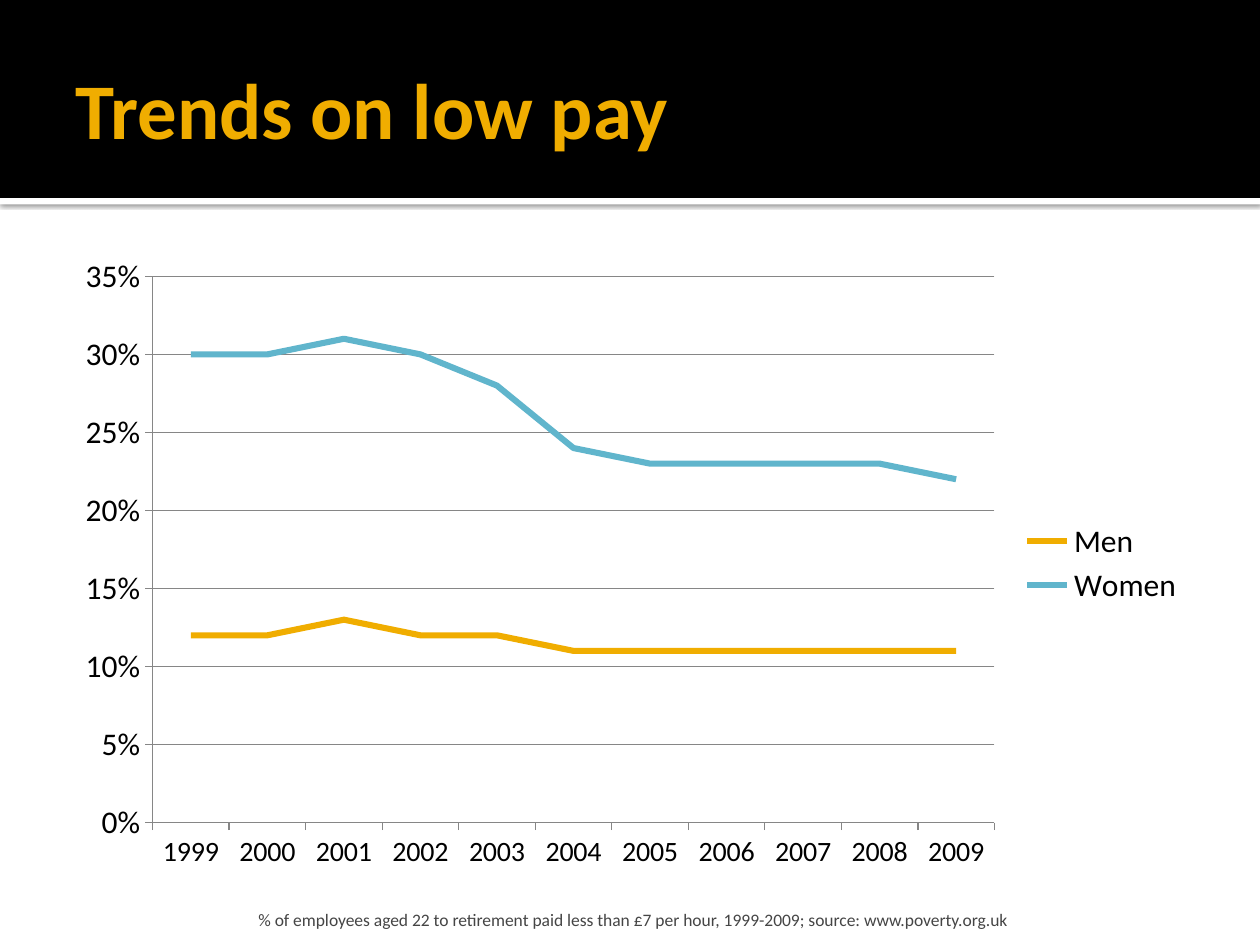
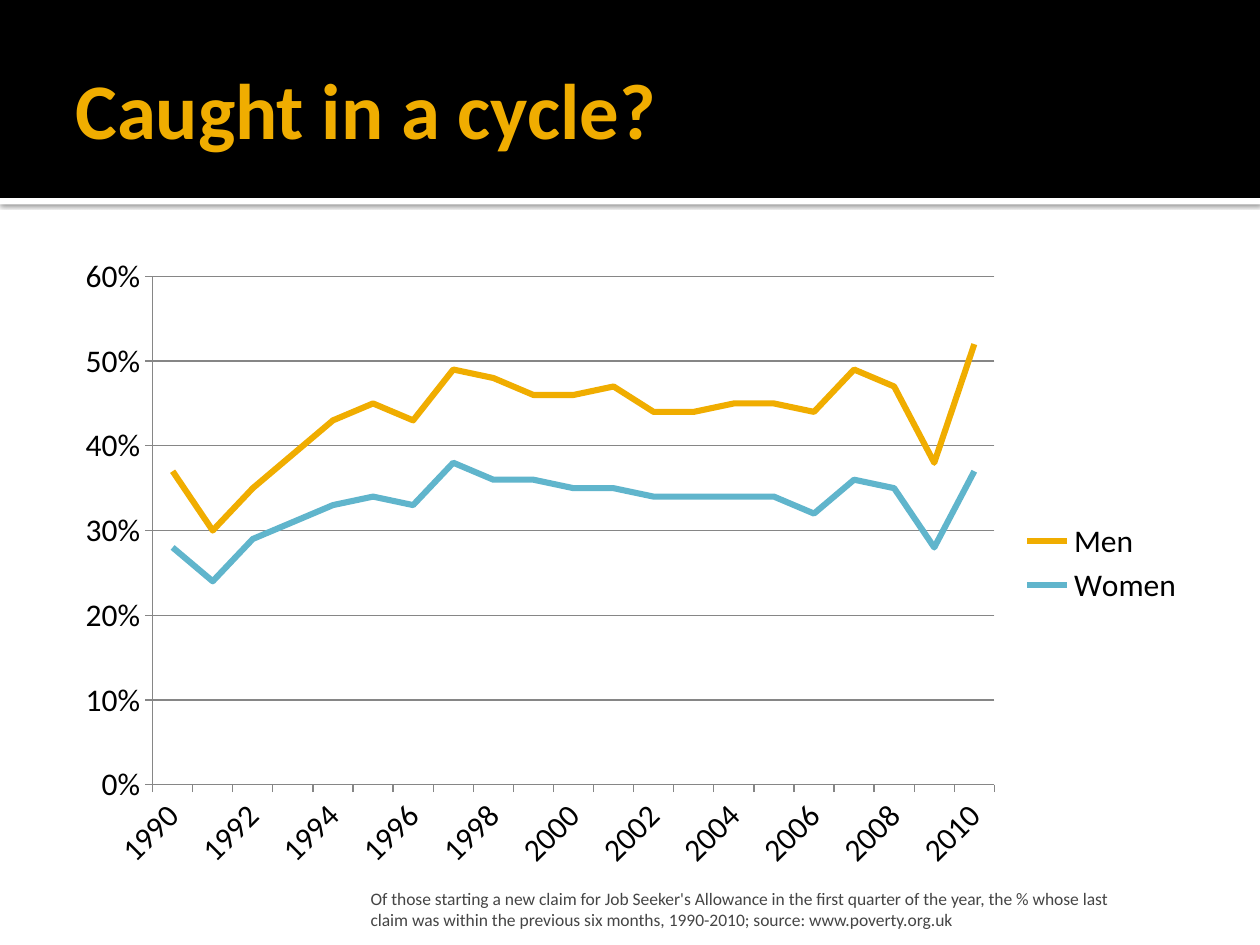
import pptx
import pptx.util
import pptx.chart.data
import pptx.dml.color
import pptx.enum.chart
import pptx.enum.shapes
import pptx.enum.text
import pptx.oxml
import pptx.oxml.ns

Cm = pptx.util.Cm
Pt = pptx.util.Pt
ANCHOR = pptx.enum.text.MSO_ANCHOR
TICK = pptx.enum.chart.XL_TICK_MARK

COLORS = {
    "band": "000000",
    "rule": "FFFFFF",
    "title": "F0AD00",
    "source": "454545",
    "label": "000000",
    "grid": "868686",
    "Men": "F0AD00",
    "Women": "60B5CC",
}
FONT = "Calibri"
SLIDE_WIDTH = 25.4
BAND_HEIGHT = 3.99
SOURCE_RIGHT = 22.63

SHADOW = (
    '<a:outerShdw %s blurRad="31750" dist="10160" dir="5400000" algn="tl" rotWithShape="0">'
    '<a:srgbClr val="000000"><a:alpha val="60000"/></a:srgbClr></a:outerShdw>'
    % pptx.oxml.ns.nsdecls("a")
)

TRENDS = {
    "title": "Trends on low pay",
    "years": range(1999, 2010),
    "percent": {
        "Men": [12, 12, 13, 12, 12, 11, 11, 11, 11, 11, 11],
        "Women": [30, 30, 31, 30, 28, 24, 23, 23, 23, 23, 22],
    },
    "scale": {"minimum_scale": 0, "maximum_scale": 0.35, "major_unit": 0.05},
    "year_size": 16,
    "year_turn": 0,
    "source": "% of employees aged 22 to retirement paid less than £7 per hour, "
              "1999-2009; source: www.poverty.org.uk",
    "source_left": 5.08,
}
CYCLE = {
    "title": "Caught in a cycle?",
    "years": range(1990, 2011),
    "percent": {
        "Men": [37, 30, 35, 39, 43, 45, 43, 49, 48, 46, 46,
                47, 44, 44, 45, 45, 44, 49, 47, 38, 52],
        "Women": [28, 24, 29, 31, 33, 34, 33, 38, 36, 36, 35,
                  35, 34, 34, 34, 34, 32, 36, 35, 28, 37],
    },
    "scale": {"minimum_scale": 0, "maximum_scale": 0.6, "major_unit": 0.1},
    "year_size": 18,
    "year_turn": -45,
    "source": "Of those starting a new claim for Job Seeker's Allowance in the first "
              "quarter of the year, the % whose last claim was within the previous six "
              "months, 1990-2010; source: www.poverty.org.uk",
    "source_left": 7.34,
}


def rgb(key):
    return pptx.dml.color.RGBColor.from_string(COLORS[key])


def apply(target, values):
    for name, value in values.items():
        setattr(target, name, value)


def style_font(font, size, color, bold=False):
    apply(font, {"name": FONT, "size": Pt(size), "bold": bold})
    font.color.rgb = rgb(color)


def style_line(line, color, width):
    line.color.rgb = rgb(color)
    line.width = Pt(width)


def add_bar(slide, top, height, color):
    bar = slide.shapes.add_shape(
        pptx.enum.shapes.MSO_SHAPE.RECTANGLE, 0, Cm(top), Cm(SLIDE_WIDTH), Cm(height))
    bar.shadow.inherit = False
    bar.fill.solid()
    bar.fill.fore_color.rgb = rgb(color)
    bar.line.fill.background()
    return bar


def add_header_band(slide):
    rule = add_bar(slide, BAND_HEIGHT, 0.13, "rule")
    effects = rule.element.spPr.find(pptx.oxml.ns.qn("a:effectLst"))
    effects.append(pptx.oxml.parse_xml(SHADOW))
    add_bar(slide, 0, BAND_HEIGHT, "band")


def add_text(slide, text, box, frame_format, size, color, bold=False):
    frame = slide.shapes.add_textbox(*map(Cm, box)).text_frame
    apply(frame, {"word_wrap": True, "margin_right": Cm(0.13),
                  "margin_top": Cm(0.13), **frame_format})
    run = frame.paragraphs[0].add_run()
    run.text = text
    style_font(run.font, size, color, bold)


def add_title(slide, text):
    add_text(slide, text, (1.27, 0.43, 22.86, 3.48),
             {"vertical_anchor": ANCHOR.MIDDLE, "margin_left": Cm(0.25),
              "margin_bottom": Cm(0.13)}, 45, "title", True)


def add_source(slide, text, left):
    add_text(slide, text, (left, 17.98, SOURCE_RIGHT - left, 0.76),
             {"vertical_anchor": ANCHOR.BOTTOM, "margin_left": Cm(0.13),
              "margin_bottom": 0}, 10, "source")


def add_trend_chart(slide, content):
    data = pptx.chart.data.CategoryChartData(number_format="0%")
    data.categories = [str(year) for year in content["years"]]
    for group, percent in content["percent"].items():
        data.add_series(group, [value / 100 for value in percent])
    chart = slide.shapes.add_chart(
        pptx.enum.chart.XL_CHART_TYPE.LINE,
        *map(Cm, (1.27, 4.93, 22.86, 12.85)), data).chart
    apply(chart, {"has_title": False, "has_legend": True})
    style_font(chart.font, 18, "label")
    apply(chart.legend, {"position": pptx.enum.chart.XL_LEGEND_POSITION.RIGHT,
                         "include_in_layout": False})
    style_font(chart.legend.font, 18, "label")
    for group in chart.plots[0].series:
        group.smooth = False
        group.marker.style = pptx.enum.chart.XL_MARKER_STYLE.NONE
        style_line(group.format.line, group.name, 3.5)
    style_axes(chart, content)


def style_axes(chart, content):
    years, shares = chart.category_axis, chart.value_axis
    for axis, size in ((years, content["year_size"]), (shares, 18)):
        apply(axis, {"major_tick_mark": TICK.OUTSIDE, "minor_tick_mark": TICK.NONE})
        style_font(axis.tick_labels.font, size, "label")
        style_line(axis.format.line, "grid", 0.75)
    apply(shares, {"has_major_gridlines": True, **content["scale"]})
    style_line(shares.major_gridlines.format.line, "grid", 0.75)
    apply(shares.tick_labels, {"number_format": "0%", "number_format_is_linked": False})
    if content["year_turn"]:
        body = years._element.find(".//" + pptx.oxml.ns.qn("a:bodyPr"))
        body.set("rot", str(content["year_turn"] * 60000))


def add_chart_slide(deck, content):
    slide = deck.slides.add_slide(deck.slide_layouts[6])
    add_header_band(slide)
    add_title(slide, content["title"])
    add_trend_chart(slide, content)
    add_source(slide, content["source"], content["source_left"])


def main():
    deck = pptx.Presentation()
    apply(deck, {"slide_width": Cm(SLIDE_WIDTH), "slide_height": Cm(19.05)})
    for content in (TRENDS, CYCLE):
        add_chart_slide(deck, content)
    deck.save("out.pptx")


if __name__ == "__main__":
    main()
